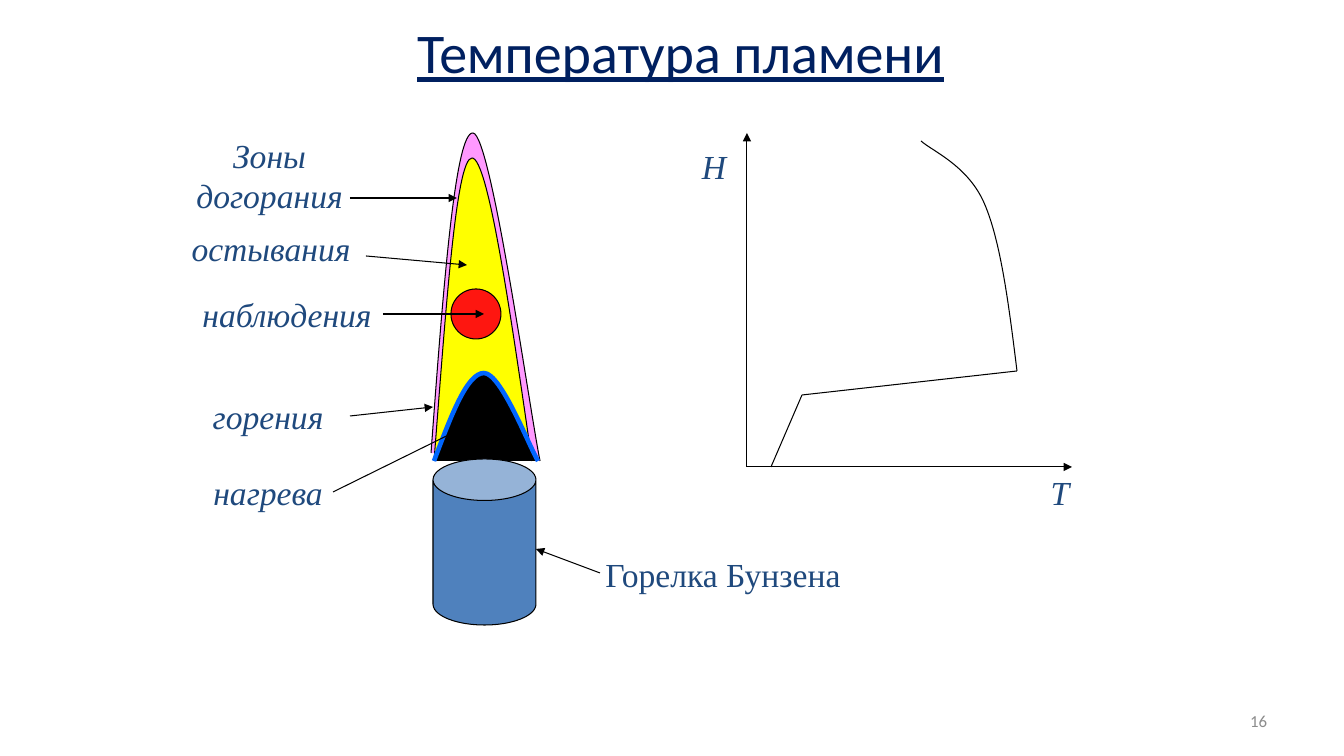
"""Build the flame temperature slide: burner zones and a height-temperature graph."""
from lxml import etree
from pptx import Presentation, util as u
from pptx.dml.color import RGBColor
from pptx.enum import shapes, text
from pptx.oxml import ns

PX = 914400 / 100.8


def px(*lengths):
    return [u.Emu(round(length * PX)) for length in lengths]


def paint(shape, fill, line="000000", width=0.75):
    shape.shadow.inherit = False
    if fill:
        shape.fill.solid()
        shape.fill.fore_color.rgb = RGBColor.from_string(fill)
    else:
        shape.fill.background()
    shape.line.color.rgb = RGBColor.from_string(line)
    shape.line.width = u.Pt(width)


presentation = Presentation()
presentation.slide_width, presentation.slide_height = px(1344, 756)
slide = presentation.slides.add_slide(presentation.slide_layouts[6])

curves = [
    ([(1017, 371), (1009, 306), (1001, 243), (985, 205), (969, 166), (932, 151), (921, 141)],
     None, "000000", 0.75),
    ([(431, 453), (443, 291), (455, 131), (473, 133), (491, 134), (529, 406), (540, 461)],
     "FF99FF", "000000", 0.75),
    ([(434, 461), (446, 309), (456, 158), (472, 158), (488, 158), (510, 309), (532, 461)],
     "FFFF00", "000000", 0.75),
    ([(434, 461), (451, 416), (467, 373), (484, 373), (501, 373), (529, 446), (538, 461)],
     "000000", "0066FF", 3.25),
]
for points, fill, line, width in curves:
    builder = slide.shapes.build_freeform(*points[0], scale=PX)
    builder.add_line_segments(points[1:], close=False)
    curve = builder.convert_to_shape()
    outline = curve.element.find(".//" + ns.qn("a:path"))
    segments = outline.findall(ns.qn("a:lnTo"))
    for start in range(0, len(segments), 3):
        bezier = etree.SubElement(outline, ns.qn("a:cubicBezTo"))
        for segment in segments[start:start + 3]:
            bezier.append(segment[0])
            outline.remove(segment)
    paint(curve, fill, line, width)

burner = slide.shapes.add_shape(shapes.MSO_SHAPE.CAN, *px(433, 459, 103, 166))
burner.adjustments[0] = 0.403
paint(burner, "4F81BD")
observation_zone = slide.shapes.add_shape(shapes.MSO_SHAPE.OVAL, *px(451, 289, 50, 50))
paint(observation_zone, "FE1610")

lines = [
    (747, 467, 1072, 467, True),
    (747, 467, 747, 133, True),
    (771, 467, 802, 395, False),
    (802, 395, 1017, 371, False),
    (600, 573, 536, 549, True),
    (350, 198, 457, 198, True),
    (366, 256, 467, 265, True),
    (383, 314, 484, 314, True),
    (350, 416, 433, 407, True),
    (333, 492, 487, 416, True),
]
for *ends, arrow in lines:
    connector = slide.shapes.add_connector(shapes.MSO_CONNECTOR.STRAIGHT, *px(*ends))
    connector.line.color.rgb = RGBColor.from_string("000000")
    connector.line.width = u.Pt(0.75)
    if arrow:
        etree.SubElement(connector.line._get_or_add_ln(), ns.qn("a:tailEnd"), type="triangle")
    etree.SubElement(connector.element.spPr, ns.qn("a:effectLst"))

CENTER, RIGHT = text.PP_ALIGN.CENTER, text.PP_ALIGN.RIGHT
title_style = ("Calibri", 40, "002060", False, CENTER)
zone_style = ("Times New Roman", 24, "1F497D", True, CENTER)
burner_style = ("Times New Roman", 24, "1F497D", False, CENTER)
number_style = ("Calibri", 12, "8C8C8C", False, RIGHT)
labels = [
    ("Температура пламени", 227, 13, 907, 78, title_style),
    ("Т", 1040, 467, 40, 50, zone_style),
    ("Н", 692, 141, 44, 50, zone_style),
    ("Зоны догорания", 181, 130, 177, 91, zone_style),
    ("остывания", 148, 223, 246, 50, zone_style),
    ("наблюдения", 164, 289, 246, 50, zone_style),
    ("горения", 181, 391, 174, 50, zone_style),
    ("нагрева", 181, 467, 174, 50, zone_style),
    ("Горелка Бунзена", 560, 549, 326, 50, burner_style),
    ("16", 964, 701, 313, 40, number_style),
]
for words, left, top, width, height, style in labels:
    name, size, color, italic, alignment = style
    frame = slide.shapes.add_textbox(*px(left, top, width, height)).text_frame
    frame.word_wrap = len(words) > 1
    if style is number_style:
        frame.vertical_anchor = text.MSO_ANCHOR.MIDDLE
    paragraph = frame.paragraphs[0]
    paragraph.text = words
    paragraph.alignment = alignment
    paragraph.font.name = name
    paragraph.font.size = u.Pt(size)
    paragraph.font.italic = italic
    paragraph.font.underline = style is title_style
    paragraph.font.color.rgb = RGBColor.from_string(color)

presentation.save("out.pptx")
